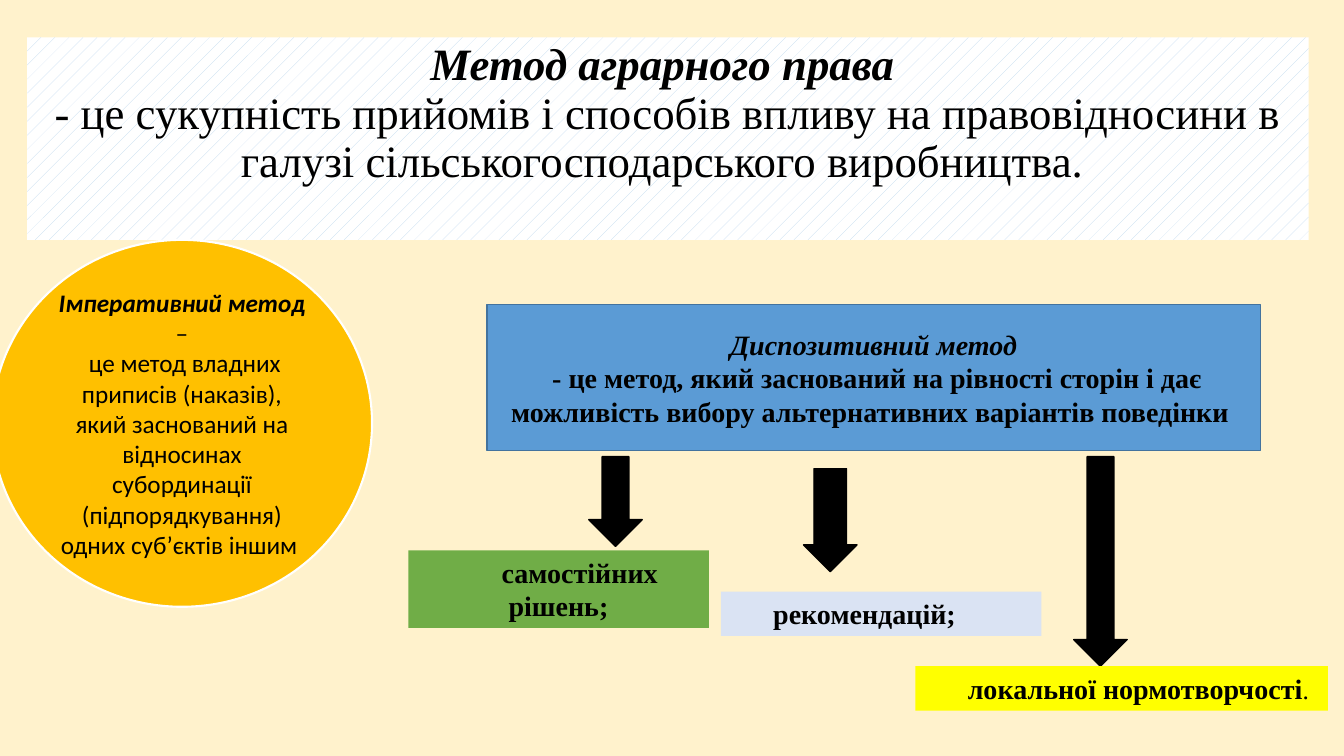
from pptx import Presentation
from pptx.dml.color import RGBColor
from pptx.enum import dml, shapes, text
from pptx.util import Inches, Pt

SERIF = "Times New Roman"
SANS = "Calibri"
CENTER = text.PP_ALIGN.CENTER
JUSTIFY = text.PP_ALIGN.JUSTIFY


def color(value):
    return RGBColor.from_string(value)


class MethodSlide:
    ink = "000000"
    background = "FFF2CC"

    def __init__(self, presentation):
        self.slide = presentation.slides.add_slide(presentation.slide_layouts[6])
        fill = self.slide.background.fill
        fill.solid()
        fill.fore_color.rgb = color(self.background)

    def shape(self, kind, box, fill, line=None, line_width=1):
        shape = self.slide.shapes.add_shape(kind, *map(Inches, box))
        shape.shadow.inherit = False
        shape.fill.solid()
        shape.fill.fore_color.rgb = color(fill)
        if line:
            shape.line.color.rgb = color(line)
            shape.line.width = Pt(line_width)
        else:
            shape.line.fill.background()
        return shape

    def add_text(self, shape, paragraphs, font, align=CENTER, indent=0, spacing=None,
                 anchor=text.MSO_ANCHOR.MIDDLE, wrap=True):
        frame = shape.text_frame
        frame.word_wrap = wrap
        frame.vertical_anchor = anchor
        for index, runs in enumerate(paragraphs):
            paragraph = frame.add_paragraph() if index else frame.paragraphs[0]
            paragraph.alignment = align
            if spacing:
                paragraph.line_spacing = spacing
            if indent:
                properties = paragraph._p.get_or_add_pPr()
                properties.set("marL", "0")
                properties.set("indent", str(Inches(indent)))
            for words, size, bold, italic in runs:
                run = paragraph.add_run()
                run.text = words
                run.font.name = font
                run.font.size = Pt(size)
                run.font.bold = bold
                run.font.italic = italic
                run.font.color.rgb = color(self.ink)

    def title(self, box, paragraphs):
        shape = self.shape(shapes.MSO_SHAPE.RECTANGLE, box, "FFFFFF")
        shape.fill.patterned()
        shape.fill.pattern = dml.MSO_PATTERN.PERCENT_5
        shape.fill.fore_color.rgb = color("BDD7EE")
        shape.fill.back_color.rgb = color("FFFFFF")
        self.add_text(shape, paragraphs, SERIF, spacing=0.9, anchor=text.MSO_ANCHOR.TOP)

    def arrow(self, box, shaft=0.5):
        shape = self.shape(shapes.MSO_SHAPE.DOWN_ARROW, box, self.ink, self.ink)
        shape.adjustments[0] = shaft

    def label(self, box, fill, runs, align=JUSTIFY, wrap=True):
        shape = self.shape(shapes.MSO_SHAPE.RECTANGLE, box, fill)
        self.add_text(shape, [runs], SERIF, align, indent=0.42,
                      anchor=text.MSO_ANCHOR.TOP, wrap=wrap)
        shape.text_frame.auto_size = text.MSO_AUTO_SIZE.SHAPE_TO_FIT_TEXT


def main():
    presentation = Presentation()
    presentation.slide_width = Inches(13.33)
    presentation.slide_height = Inches(7.5)
    page = MethodSlide(presentation)

    page.title((0.27, 0.37, 12.71, 2.01), [
        [("Метод аграрного права ", 32, True, True)],
        [("- це сукупність прийомів і способів впливу на правовідносини в галузі "
          "сільськогосподарського виробництва. ", 32, False, False)],
    ])

    imperative = page.shape(shapes.MSO_SHAPE.OVAL, (-0.08, 2.38, 3.77, 3.64),
                            "FFC000", "FFFFFF", 1.5)
    page.add_text(imperative, [
        [("Імперативний метод ", 18, True, True), ("–", 18, False, False)],
        [(" це метод владних приписів (наказів), який заснований на відносинах "
          "субординації (підпорядкування) одних суб’єктів іншим ", 18, False, False)],
    ], SANS)

    dispositive = page.shape(shapes.MSO_SHAPE.RECTANGLE, (4.83, 3.02, 7.67, 1.45),
                             "5B9BD5", "43739E")
    page.add_text(dispositive, [
        [("Диспозитивний метод", 20, True, True)],
        [(" - це метод, який заснований на рівності сторін і дає можливість вибору "
          "альтернативних варіантів поведінки ", 20, True, False)],
    ], SERIF)

    page.arrow((5.84, 4.53, 0.53, 0.89))
    page.arrow((7.97, 4.65, 0.53, 1.02), 0.61)
    page.arrow((10.65, 4.53, 0.53, 2.08))

    page.label((4.05, 5.46, 2.98, 0.77), "70AD47",
               [("самостійних рішень;", 20, True, False)], align=CENTER)
    page.label((7.15, 5.87, 3.18, 0.44), "DAE3F3",
               [("рекомендацій; ", 20, True, False)])
    page.label((9.08, 6.61, 4.09, 0.44), "FFFF00",
               [("локальної нормотворчості", 20, True, False),
                (". ", 18, False, False)], wrap=False)

    presentation.save("out.pptx")


if __name__ == "__main__":
    main()
